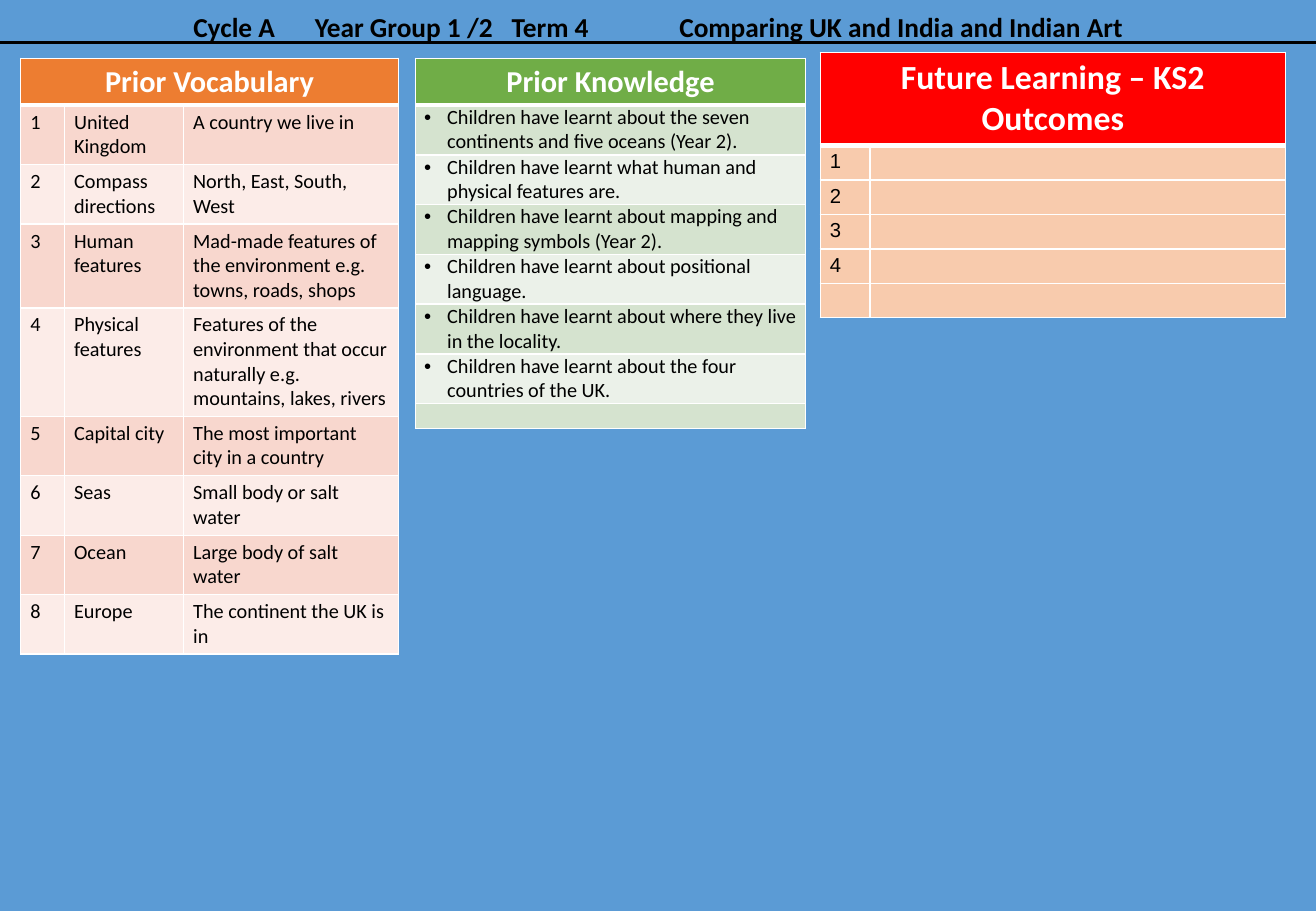
import pptx
import pptx.util
import pptx.dml.color
import pptx.enum.shapes
import pptx.enum.text
from lxml import etree

Inches, Pt = pptx.util.Inches, pptx.util.Pt
RGB = pptx.dml.color.RGBColor.from_string
CENTER = pptx.enum.text.PP_ALIGN.CENTER
NS = "{http://schemas.openxmlformats.org/drawingml/2006/main}"

COLOURS = {
    "sky": "5B9BD5", "black": "000000", "white": "FFFFFF",
    "orange": "ED7D31", "peach": "F8D7CE", "pale_peach": "FCECE8",
    "green": "70AD47", "mint": "D5E3CF", "pale_mint": "EBF1E9",
    "red": "FF0000", "apricot": "F8CBAD",
}

HEADING = "Cycle A\tYear Group 1 /2\tTerm 4\tComparing UK and India and Indian Art"
HEADING_TABS = [1, 2.62, 4]

VOCABULARY = [
    ("1", "United Kingdom", "A country we live in"),
    ("2", "Compass directions", "North, East, South, West"),
    ("3", "Human features", "Mad-made features of the environment e.g. towns, roads, shops"),
    ("4", "Physical features",
     "Features of the environment that occur naturally e.g. mountains, lakes, rivers"),
    ("5", "Capital city", "The most important city in a country"),
    ("6", "Seas", "Small body or salt water"),
    ("7", "Ocean", "Large body of salt water"),
    ("8", "Europe", "The continent the UK is in"),
]
KNOWLEDGE = [
    ("Children have learnt about the seven continents and five oceans (Year 2).",),
    ("Children have learnt what human and physical features are.",),
    ("Children have learnt about mapping and mapping symbols (Year 2).",),
    ("Children have learnt about positional language.",),
    ("Children have learnt about where they live in the locality.",),
    ("Children have learnt about the four countries of the UK.",),
    ("",),
]
OUTCOMES = [("1", ""), ("2", ""), ("3", ""), ("4", ""), ("", "")]

PANELS = [
    dict(title="Prior Vocabulary", title_size=18, title_fill="orange", rows=VOCABULARY,
         bands=["peach", "pale_peach"], left=0.17, top=0.48, widths=[0.36, 0.98, 1.77],
         heights=[0.38, 0.49, 0.49, 0.69, 0.89, 0.49, 0.49, 0.49, 0.49],
         font="Calibri", margins=(0.08, 0.04), bullets=False),
    dict(title="Prior Knowledge", title_size=18, title_fill="green", rows=KNOWLEDGE,
         bands=["mint", "pale_mint"], left=3.42, top=0.48, widths=[3.21],
         heights=[0.38] + [0.41] * 6 + [0.2],
         font="Calibri", margins=(0.07, 0), bullets=True),
    dict(title="Future Learning – KS2 Outcomes", title_size=20, title_fill="red", rows=OUTCOMES,
         bands=["apricot"], left=6.75, top=0.43, widths=[0.41, 3.42],
         heights=[0.77] + [0.27] * 5,
         font="Arial", margins=(0.08, 0.04), bullets=False),
]


def style_text(paragraph, size, font, colour, bold):
    for run in paragraph.runs:
        run.font.size = Pt(size)
        run.font.name = font
        run.font.bold = bold
        run.font.color.rgb = RGB(COLOURS[colour])


def border_cell(cell, bottom):
    properties = cell._tc.get_or_add_tcPr()
    for index, (side, width) in enumerate([("L", 1), ("R", 1), ("T", 1), ("B", bottom)]):
        edge = etree.Element(f"{NS}ln{side}", w=str(Pt(width)))
        fill = etree.SubElement(edge, f"{NS}solidFill")
        etree.SubElement(fill, f"{NS}srgbClr", val=COLOURS["white"])
        properties.insert(index, edge)


def fill_cell(cell, text, fill, margins, size, font, colour, bold, bottom=1):
    cell.fill.solid()
    cell.fill.fore_color.rgb = RGB(COLOURS[fill])
    cell.margin_left = cell.margin_right = Inches(margins[0])
    cell.margin_top = cell.margin_bottom = Inches(margins[1])
    border_cell(cell, bottom)
    paragraph = cell.text_frame.paragraphs[0]
    paragraph.text = text
    style_text(paragraph, size, font, colour, bold)
    if not text:
        etree.SubElement(paragraph._p, f"{NS}endParaRPr", sz=str(size * 100))
    return paragraph


def add_bullet(paragraph):
    properties = paragraph._p.get_or_add_pPr()
    properties.set("marL", str(Inches(0.19)))
    properties.set("indent", str(Inches(-0.19)))
    etree.SubElement(properties, f"{NS}buFont", typeface="Arial")
    etree.SubElement(properties, f"{NS}buChar", char="•")


def add_panel(slide, panel):
    widths, heights = panel["widths"], panel["heights"]
    table = slide.shapes.add_table(
        len(heights), len(widths), Inches(panel["left"]), Inches(panel["top"]),
        Inches(sum(widths)), Inches(sum(heights))).table
    for column, width in zip(table.columns, widths):
        column.width = Inches(width)
    for row, height in zip(table.rows, heights):
        row.height = Inches(height)
    if len(widths) > 1:
        table.cell(0, 0).merge(table.cell(0, len(widths) - 1))
    for c in range(len(widths)):
        title = fill_cell(table.cell(0, c), "" if c else panel["title"], panel["title_fill"],
                          (0.08, 0.04), panel["title_size"], "Calibri", "white", True, bottom=3)
        title.alignment = CENTER
    for r, entries in enumerate(panel["rows"]):
        band = panel["bands"][r % len(panel["bands"])]
        for c, text in enumerate(entries):
            entry = fill_cell(table.cell(r + 1, c), text, band, panel["margins"],
                              12, panel["font"], "black", False)
            if panel["bullets"] and text:
                add_bullet(entry)


def add_rule(slide):
    rule = slide.shapes.add_connector(pptx.enum.shapes.MSO_CONNECTOR.STRAIGHT,
                                      0, Inches(0.35), Inches(10.83), Inches(0.35))
    rule.line.color.rgb = RGB(COLOURS["black"])
    rule.line.width = Pt(1.5)
    etree.SubElement(rule._element.spPr, f"{NS}effectLst")


def add_heading(slide):
    frame = slide.shapes.add_textbox(Inches(0.5), Inches(0.11), Inches(9.83), Inches(0.3)).text_frame
    frame.word_wrap = True
    frame.vertical_anchor = pptx.enum.text.MSO_ANCHOR.BOTTOM
    heading = frame.paragraphs[0]
    heading.text = HEADING
    heading.alignment = CENTER
    heading.line_spacing = 0.9
    stops = etree.SubElement(heading._p.get_or_add_pPr(), f"{NS}tabLst")
    for stop in HEADING_TABS:
        etree.SubElement(stops, f"{NS}tab", pos=str(Inches(stop)), algn="l")
    style_text(heading, 16.2, "Calibri", "black", True)


def main():
    deck = pptx.Presentation()
    deck.slide_width, deck.slide_height = Inches(10.83), Inches(7.5)
    slide = deck.slides.add_slide(deck.slide_layouts[6])
    slide.background.fill.solid()
    slide.background.fill.fore_color.rgb = RGB(COLOURS["sky"])
    add_panel(slide, PANELS[0])
    add_rule(slide)
    for panel in PANELS[1:]:
        add_panel(slide, panel)
    add_heading(slide)
    deck.save("out.pptx")


if __name__ == "__main__":
    main()
